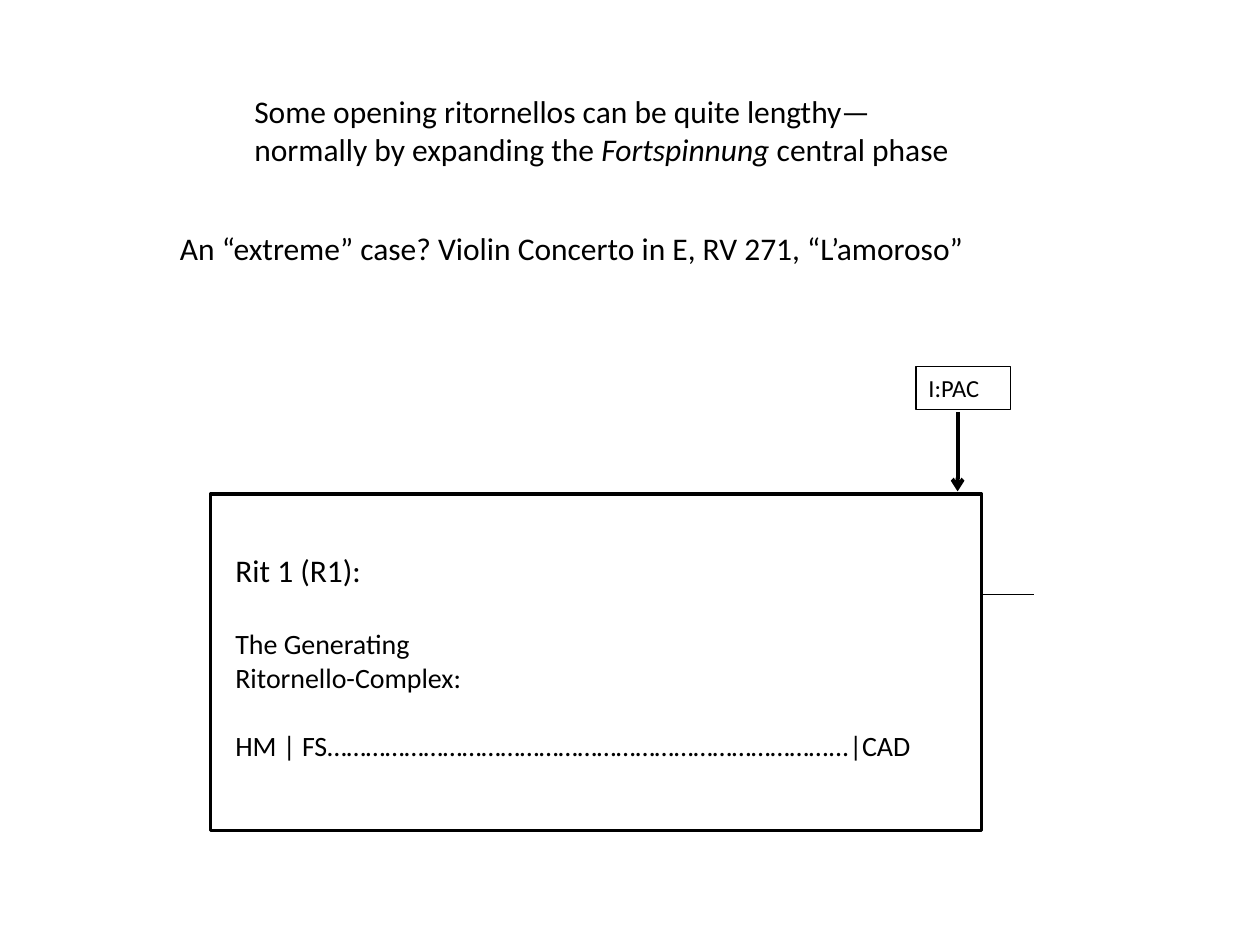
from pptx import Presentation, util as u
from pptx.dml.color import RGBColor
from pptx.enum import shapes, text
from pptx.oxml.ns import qn
from lxml import etree

FONT, INK = "Calibri", "000000"
WIDTH, HEIGHT = 10, 7.5

RITORNELLO = (1.67, 3.92, 6.12, 2.67)
CADENCE = (7.27, 2.91, 0.75, 0.34)

# Each paragraph: size, space before, runs of (words, italic)
TEXTS = [
    ((1.77, 4.32, 5.86, 1.78), [
        (18, 0, [("Rit 1 (R1):", False)]),
        (16, 22, [("The Generating", False)]),
        (16, 0, [("Ritornello-Complex:", False)]),
        (16, 19.5, [("HM | FS……………………………………………………………………...|CAD", False)]),
    ]),
    ((1.92, 0.68, 6.04, 0.71), [
        (18, 0, [("Some opening ritornellos can be quite lengthy—", False)]),
        (18, 0, [("normally by expanding the ", False), ("Fortspinnung", True),
                 (" central phase", False)]),
    ]),
    ((1.33, 1.77, 7.5, 0.42), [
        (18, 0, [("An “extreme” case? Violin Concerto in E, RV 271, “L’amoroso”", False)]),
    ]),
]
CADENCE_TEXT = [(14, 0, [("I:PAC", False)])]


def color(value):
    return RGBColor.from_string(value)


def inches(values):
    return [u.Inches(value) for value in values]


def write(shape, paragraphs):
    frame = shape.text_frame
    frame.word_wrap = True
    frame.vertical_anchor = text.MSO_ANCHOR.TOP
    for index, (size, gap, runs) in enumerate(paragraphs):
        para = frame.add_paragraph() if index else frame.paragraphs[0]
        para.alignment = text.PP_ALIGN.LEFT
        para.space_before = u.Pt(gap)
        para.font.size = u.Pt(size)
        para.font.name = FONT
        para.font.color.rgb = color(INK)
        for words, italic in runs:
            span = para.add_run()
            span.text = words
            if italic:
                span.font.italic = True


def add_frame(page, area, weight):
    box = page.shapes.add_shape(shapes.MSO_SHAPE.RECTANGLE, *inches(area))
    box.shadow.inherit = False
    box.fill.background()
    box.line.color.rgb = color(INK)
    box.line.width = u.Pt(weight)
    return box


def add_line(page, start, end, weight, arrow=False):
    line = page.shapes.add_connector(
        shapes.MSO_CONNECTOR.STRAIGHT, *inches(start + end))
    line.line.color.rgb = color(INK)
    line.line.width = u.Pt(weight)
    if arrow:
        etree.SubElement(line.line._get_or_add_ln(), qn("a:tailEnd"), type="arrow")
    etree.SubElement(line._element.spPr, qn("a:effectLst"))


def main():
    deck = Presentation()
    deck.slide_width, deck.slide_height = inches((WIDTH, HEIGHT))
    page = deck.slides.add_slide(deck.slide_layouts[6])

    left, top, width, height = RITORNELLO
    right = left + width
    add_frame(page, RITORNELLO, 2)
    add_line(page, (right, top + 0.8), (right + 0.42, top + 0.8), 0.75)
    add_line(page, (7.6, 3.27), (7.6, 3.9), 2.25, arrow=True)
    write(add_frame(page, CADENCE, 0.75), CADENCE_TEXT)
    for area, paragraphs in TEXTS:
        write(page.shapes.add_textbox(*inches(area)), paragraphs)

    deck.save("out.pptx")


if __name__ == "__main__":
    main()
